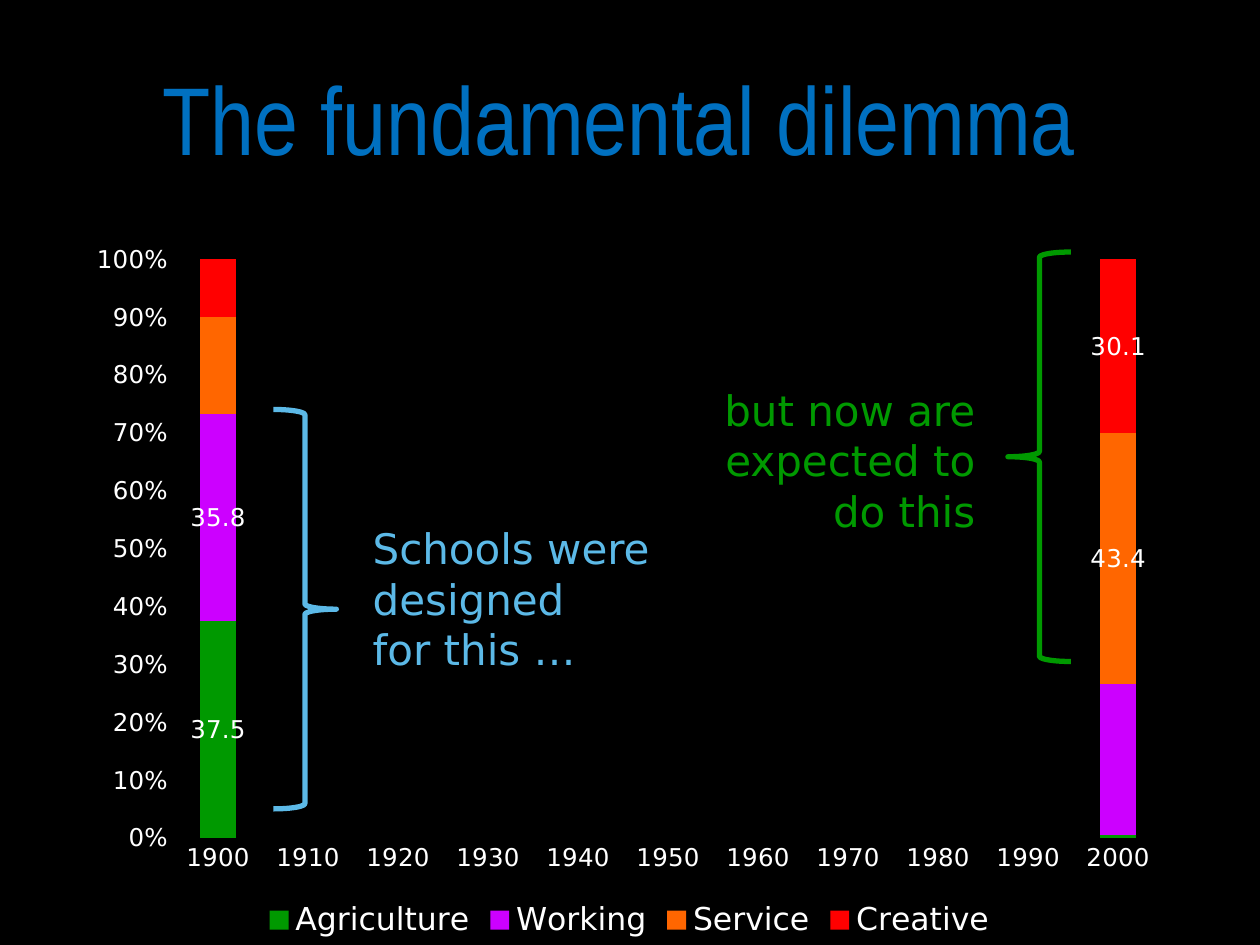
from dataclasses import dataclass

from lxml import etree
from pptx import Presentation
from pptx.chart.data import CategoryChartData
from pptx.dml.color import RGBColor
from pptx.enum.chart import XL_CHART_TYPE, XL_LEGEND_POSITION, XL_TICK_MARK
from pptx.enum.shapes import MSO_SHAPE
from pptx.enum.text import MSO_AUTO_SIZE, PP_ALIGN
from pptx.oxml.ns import qn
from pptx.util import Inches, Pt

STACKED_COLUMN = XL_CHART_TYPE.COLUMN_STACKED_100
LEGEND_BOTTOM = XL_LEGEND_POSITION.BOTTOM
NO_TICK = XL_TICK_MARK.NONE
RIGHT_BRACE = MSO_SHAPE.RIGHT_BRACE
GROW = MSO_AUTO_SIZE.SHAPE_TO_FIT_TEXT
LEFT, CENTER, RIGHT = PP_ALIGN.LEFT, PP_ALIGN.CENTER, PP_ALIGN.RIGHT


@dataclass(frozen=True)
class Theme:
    background: str = "000000"
    chart_text: str = "FFFFFF"
    title: str = "0070C0"
    past: str = "5CB9E7"
    present: str = "009900"
    title_font: str = "Arial Narrow"
    body_font: str = "DejaVu Sans"
    title_size: int = 55
    note_size: int = 24
    legend_size: int = 18
    label_size: int = 14
    brace_width: int = 3


@dataclass(frozen=True)
class Box:
    left: float
    top: float
    width: float
    height: float

    def lengths(self) -> tuple:
        return tuple(Inches(v) for v in (self.left, self.top, self.width, self.height))


@dataclass(frozen=True)
class Sector:
    name: str
    first: float
    last: float
    color: str
    labelled_year: int


@dataclass(frozen=True)
class Caption:
    box: Box
    paragraphs: tuple
    color: str
    size: int
    font: str
    alignment: PP_ALIGN


@dataclass(frozen=True)
class Brace:
    box: Box
    color: str
    flipped: bool


THEME = Theme()
YEARS = range(1900, 2001, 10)
CHART_BOX = Box(0.58, 1.83, 8.83, 5.67)
PLOT_AREA = {"x": 0.09, "y": 0.04, "w": 0.89, "h": 0.81}

SECTORS = (
    Sector("Agriculture", 37.5, 0.4, "009900", 1900),
    Sector("Working", 35.8, 26.1, "CC00FF", 1900),
    Sector("Service", 16.7, 43.4, "FF6600", 2000),
    Sector("Creative", 10, 30.1, "FF0000", 2000),
)
# A vertical tab is a line break within a paragraph
CAPTIONS = (
    Caption(Box(0.67, 0.42, 8.48, 1.03), ("The fundamental dilemma",),
            THEME.title, THEME.title_size, THEME.title_font, CENTER),
    Caption(Box(2.86, 4.1, 2.56, 1.31), ("Schools were \vdesigned\vfor this …",),
            THEME.past, THEME.note_size, THEME.body_font, LEFT),
    Caption(Box(5.58, 3, 2.26, 1.31), ("but now are\vexpected to", "do this"),
            THEME.present, THEME.note_size, THEME.body_font, RIGHT),
)
BRACES = (
    Brace(Box(2.17, 3.25, 0.5, 3.17), THEME.past, False),
    Brace(Box(8, 2, 0.5, 3.25), THEME.present, True),
)


def style_font(font, size: int, color: str, name: str) -> None:
    font.size = Pt(size)
    font.color.rgb = RGBColor.from_string(color)
    font.name = name


def set_plot_layout(chart) -> None:
    """Fix the inner plot area as fractions of the chart."""
    plot_area = chart._chartSpace.chart.plotArea
    for old_layout in plot_area.findall(qn("c:layout")):
        plot_area.remove(old_layout)
    layout = etree.Element(qn("c:layout"))
    manual = etree.SubElement(layout, qn("c:manualLayout"))
    settings = {"layoutTarget": "inner", "xMode": "edge", "yMode": "edge", **PLOT_AREA}
    for tag, value in settings.items():
        etree.SubElement(manual, qn(f"c:{tag}")).set("val", str(value))
    plot_area.insert(0, layout)


def add_sector_chart(slide) -> None:
    data = CategoryChartData()
    data.categories = [str(year) for year in YEARS]
    gap = [None] * (len(YEARS) - 2)
    for sector in SECTORS:
        data.add_series(sector.name, [sector.first, *gap, sector.last])
    chart = slide.shapes.add_chart(STACKED_COLUMN, *CHART_BOX.lengths(), data).chart
    style_font(chart.font, THEME.legend_size, THEME.chart_text, THEME.body_font)
    chart.has_title = False
    chart.has_legend = True
    chart.legend.position = LEGEND_BOTTOM
    chart.legend.include_in_layout = False
    set_plot_layout(chart)

    # Axes
    for axis in (chart.category_axis, chart.value_axis):
        axis.major_tick_mark = axis.minor_tick_mark = NO_TICK
        axis.has_major_gridlines = False
        axis.format.line.fill.background()
        style_font(axis.tick_labels.font, THEME.label_size, THEME.chart_text, THEME.body_font)
    chart.value_axis.minimum_scale = 0
    chart.value_axis.maximum_scale = 1
    chart.value_axis.major_unit = 0.1
    chart.value_axis.tick_labels.number_format = "0%"
    chart.value_axis.tick_labels.number_format_is_linked = False

    # Series, each with one labelled column
    plot = chart.plots[0]
    plot.vary_by_categories = False
    plot.gap_width = 150
    plot.overlap = 100
    for sector, series in zip(SECTORS, plot.series):
        series.format.fill.solid()
        series.format.fill.fore_color.rgb = RGBColor.from_string(sector.color)
        series.data_labels.show_value = False
        label = series.points[YEARS.index(sector.labelled_year)].data_label
        style_font(label.font, THEME.label_size, THEME.chart_text, THEME.body_font)


def add_caption(slide, caption: Caption) -> None:
    frame = slide.shapes.add_textbox(*caption.box.lengths()).text_frame
    frame.word_wrap = False
    frame.auto_size = GROW
    for index, text in enumerate(caption.paragraphs):
        paragraph = frame.add_paragraph() if index else frame.paragraphs[0]
        paragraph.text = text
        paragraph.alignment = caption.alignment
        style_font(paragraph.font, caption.size, caption.color, caption.font)


def add_brace(slide, brace: Brace) -> None:
    shape = slide.shapes.add_shape(RIGHT_BRACE, *brace.box.lengths())
    shape.shadow.inherit = False
    shape.fill.background()
    shape.line.color.rgb = RGBColor.from_string(brace.color)
    shape.line.width = Pt(THEME.brace_width)
    if brace.flipped:
        shape._element.spPr.find(qn("a:xfrm")).set("flipH", "1")


def main() -> None:
    presentation = Presentation()
    presentation.slide_width = Inches(10)
    presentation.slide_height = Inches(7.5)
    slide = presentation.slides.add_slide(presentation.slide_layouts[6])
    slide.background.fill.solid()
    slide.background.fill.fore_color.rgb = RGBColor.from_string(THEME.background)

    add_sector_chart(slide)
    for caption in CAPTIONS:
        add_caption(slide, caption)
    for brace in BRACES:
        add_brace(slide, brace)
    presentation.save("out.pptx")


if __name__ == "__main__":
    main()
